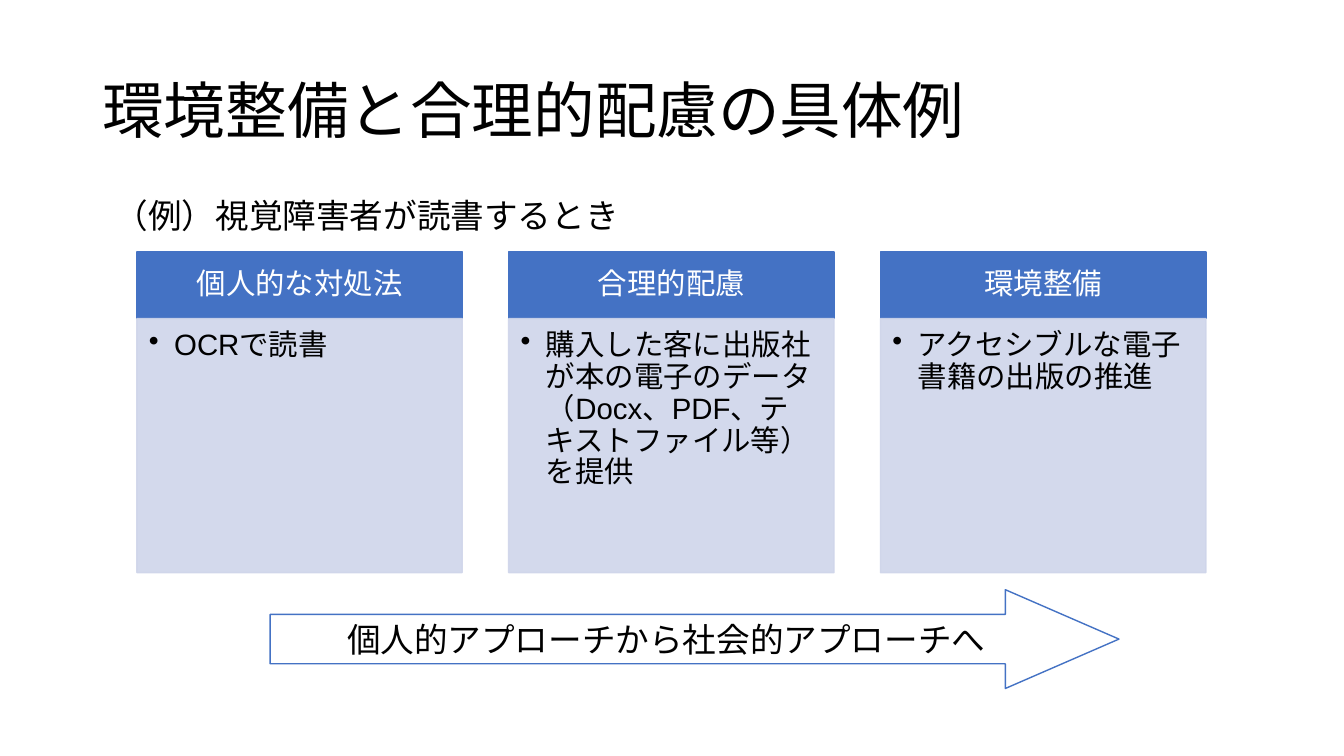
"""Build a slide comparing individual coping, reasonable accommodation and environment building."""
from lxml.etree import SubElement
from pptx import Presentation
from pptx.dml.color import RGBColor
from pptx.enum.lang import MSO_LANGUAGE_ID as Language
from pptx.enum.shapes import MSO_SHAPE as Shape
from pptx.enum.text import MSO_ANCHOR as Anchor, PP_ALIGN as Align
from pptx.oxml.ns import qn
from pptx.util import Cm, Pt

TITLE = "環境整備と合理的配慮の具体例"
EXAMPLE = "（例）視覚障害者が読書するとき"
COLUMNS = [
    ("個人的な対処法", "OCRで読書"),
    ("合理的配慮", "購入した客に出版社が本の電子のデータ（Docx、PDF、テキストファイル等）を提供"),
    ("環境整備", "アクセシブルな電子書籍の出版の推進"),
]
CONCLUSION = "個人的アプローチから社会的アプローチへ"

THEME = {
    "blue": "4472C4", "pale": "CFD5EA", "white": "FFFFFF", "black": "000000",
    "heading": "Calibri", "body": "Arial",
    "title_size": 44, "text_size": 24, "column_size": 21,
}
COLUMN_LEFT, COLUMN_PITCH, COLUMN_WIDTH = 3.45, 9.37, 8.2
HEADER_TOP, HEADER_HEIGHT, BODY_HEIGHT = 6.35, 1.68, 6.4
BULLET_INDENT = 0.64


def color(name):
    return RGBColor.from_string(THEME[name])


def write(box, text, *, size="text_size", font="heading", ink="black", align=Align.LEFT,
          anchor=Anchor.TOP, insets=(0.25, 0.13, 0.25, 0.13), spacing=1.0, wrap=True, bullet=False):
    frame = box.text_frame
    frame.word_wrap = wrap
    frame.vertical_anchor = anchor
    frame.margin_left, frame.margin_top, frame.margin_right, frame.margin_bottom = map(Cm, insets)
    para = frame.paragraphs[0]
    para.alignment = align
    para.line_spacing = spacing
    if bullet:
        properties = para._p.get_or_add_pPr()
        properties.set("marL", str(Cm(BULLET_INDENT)))
        properties.set("indent", str(-Cm(BULLET_INDENT)))
        SubElement(properties, qn("a:buChar"), char="•")
    span = para.add_run()
    span.text = text
    span.font.size = Pt(THEME[size])
    span.font.name = THEME[font]
    span.font.color.rgb = color(ink)
    span.font.language_id = Language.JAPANESE


def add_box(page, kind, area, fill, line, opacity=100):
    box = page.shapes.add_shape(kind, *map(Cm, area))
    box.shadow.inherit = False
    box.fill.solid()
    box.fill.fore_color.rgb = color(fill)
    box.line.color.rgb = color(line)
    box.line.width = Pt(1)
    if opacity < 100:
        for tint in box._element.spPr.iter(qn("a:srgbClr")):
            SubElement(tint, qn("a:alpha"), val=str(opacity * 1000))
    return box


def add_column(page, index, heading, detail):
    left = COLUMN_LEFT + index * COLUMN_PITCH
    header = add_box(page, Shape.RECTANGLE, (left, HEADER_TOP, COLUMN_WIDTH, HEADER_HEIGHT),
                     "blue", "blue")
    write(header, heading, size="column_size", font="body", ink="white", align=Align.CENTER,
          anchor=Anchor.MIDDLE, insets=(0.41, 0.23, 0.41, 0.23), spacing=0.9)
    body_area = (left, HEADER_TOP + HEADER_HEIGHT, COLUMN_WIDTH, BODY_HEIGHT)
    body = add_box(page, Shape.RECTANGLE, body_area, "pale", "pale", opacity=90)
    write(body, detail, size="column_size", font="body", insets=(0.3, 0.3, 0.41, 0.46),
          spacing=0.9, bullet=True)


def main():
    deck = Presentation()
    deck.slide_width, deck.slide_height = Cm(33.87), Cm(19.05)
    page = deck.slides.add_slide(deck.slide_layouts[6])

    title = page.shapes.add_textbox(Cm(2.33), Cm(1.01), Cm(29.21), Cm(3.68))
    write(title, TITLE, size="title_size", anchor=Anchor.MIDDLE, spacing=0.9)
    example = page.shapes.add_textbox(Cm(2.64), Cm(4.78), Cm(13.34), Cm(1.27))
    write(example, EXAMPLE, wrap=False)

    for index, (heading, detail) in enumerate(COLUMNS):
        add_column(page, index, heading, detail)

    arrow = add_box(page, Shape.RIGHT_ARROW, (6.81, 14.86, 21.39, 2.49), "white", "blue")
    arrow.adjustments[1] = 1.15
    write(arrow, CONCLUSION, align=Align.CENTER, anchor=Anchor.MIDDLE)

    deck.save("out.pptx")


if __name__ == "__main__":
    main()
